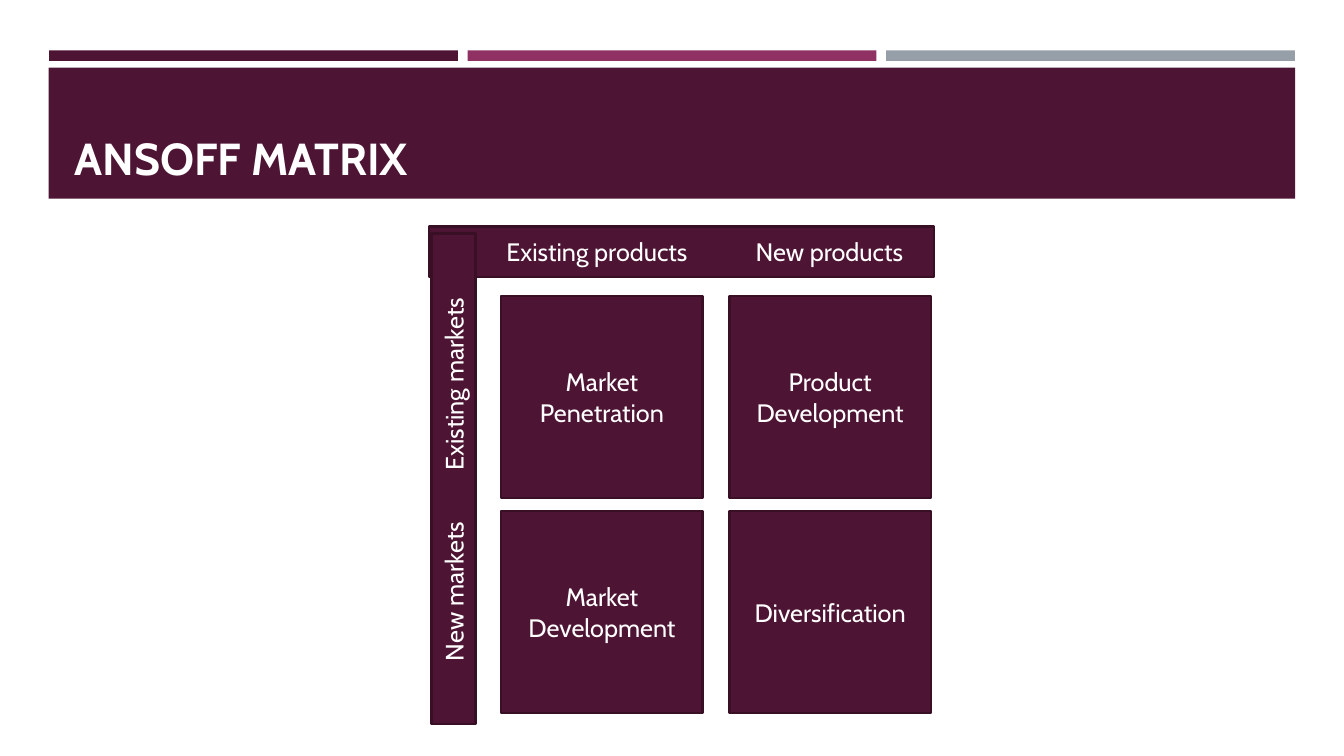
"""Build the Ansoff matrix slide."""
from lxml import etree
from pptx import Presentation
from pptx.dml.color import RGBColor
from pptx.enum.shapes import MSO_SHAPE
from pptx.enum.text import MSO_ANCHOR, MSO_AUTO_SIZE, PP_ALIGN
from pptx.oxml.ns import qn
from pptx.util import Pt

RECT, MINUS = MSO_SHAPE.RECTANGLE, MSO_SHAPE.MATH_MINUS
LEFT, CENTER = PP_ALIGN.LEFT, PP_ALIGN.CENTER
MIDDLE, BOTTOM = MSO_ANCHOR.MIDDLE, MSO_ANCHOR.BOTTOM
PLUM = RGBColor(0x4D, 0x14, 0x34)
DARK = RGBColor(0x39, 0x0F, 0x26)
ROSE = RGBColor(0x90, 0x31, 0x63)
GRAY = RGBColor(0x96, 0x9F, 0xA7)
WHITE = RGBColor(0xFF, 0xFF, 0xFF)

TITLE = "ANSOFF MATRIX"
STRIPES = [PLUM, ROSE, GRAY]
BARS = [
    {"text": "Existing products\tNew products", "at": (241.2, 103, 491, 153.4),
     "turn": 0, "inset": 55.5, "tab": 178},
    {"text": "New markets\tExisting markets", "at": (85.7, 275.8, 476.6, 132.5),
     "turn": 270, "inset": 45, "tab": 136},
]
CELLS = [["Market Penetration", "Product Development"],
         ["Market Development", "Diversification"]]
LABEL = {"name": "Cabin", "size": Pt(18), "bold": False}
HEAD = {"name": "Cabin", "size": Pt(32), "bold": True}


def style(frame, text, font, align, anchor, tab=None):
    """Fill a text frame with one formatted paragraph."""
    frame.word_wrap = True
    frame.auto_size = MSO_AUTO_SIZE.NONE
    frame.vertical_anchor = anchor
    frame.text = text
    para = frame.paragraphs[0]
    para.alignment = align
    if tab:
        stops = etree.SubElement(para._p.get_or_add_pPr(), qn("a:tabLst"))
        etree.SubElement(stops, qn("a:tab"), pos=str(Pt(tab)), algn="l")
    for key, value in font.items():
        setattr(para.font, key, value)
    para.font.color.rgb = WHITE


def block(slide, kind, at, fill, edge=None):
    """Add a flat shape, outlined when an edge colour is given."""
    shape = slide.shapes.add_shape(kind, *map(Pt, at))
    shape.shadow.inherit = False
    shape.fill.solid()
    shape.fill.fore_color.rgb = fill
    if edge:
        shape.line.color.rgb = edge
        shape.line.width = Pt(1.75)
    else:
        shape.line.fill.background()
    return shape


def main():
    """Lay out the banner, the axis bars and the four cells."""
    deck = Presentation()
    deck.slide_width, deck.slide_height = Pt(960), Pt(540)
    slide = deck.slides.add_slide(deck.slide_layouts[5])

    for i, color in enumerate(STRIPES):
        block(slide, RECT, (35 + 299 * i, 36, 292, 7.5), color)
    block(slide, RECT, (34.8, 48.4, 890.4, 93.6), PLUM)

    title = slide.shapes.title
    title.left, title.top, title.width, title.height = map(
        Pt, (46, 55.5, 868.4, 80))
    style(title.text_frame, TITLE, HEAD, LEFT, BOTTOM)
    slide.shapes._spTree.append(title._element)

    for bar in BARS:
        shape = block(slide, MINUS, bar["at"], PLUM, DARK)
        shape.rotation = bar["turn"]
        shape.text_frame.margin_left = Pt(bar["inset"])
        style(shape.text_frame, bar["text"], LABEL, LEFT, MIDDLE, bar["tab"])

    for r, row in enumerate(CELLS):
        for c, text in enumerate(row):
            at = (358 + 163 * c, 211.6 + 153.6 * r, 144, 144)
            cell = block(slide, RECT, at, PLUM, DARK)
            style(cell.text_frame, text, LABEL, CENTER, MIDDLE)

    deck.save("out.pptx")


if __name__ == "__main__":
    main()
